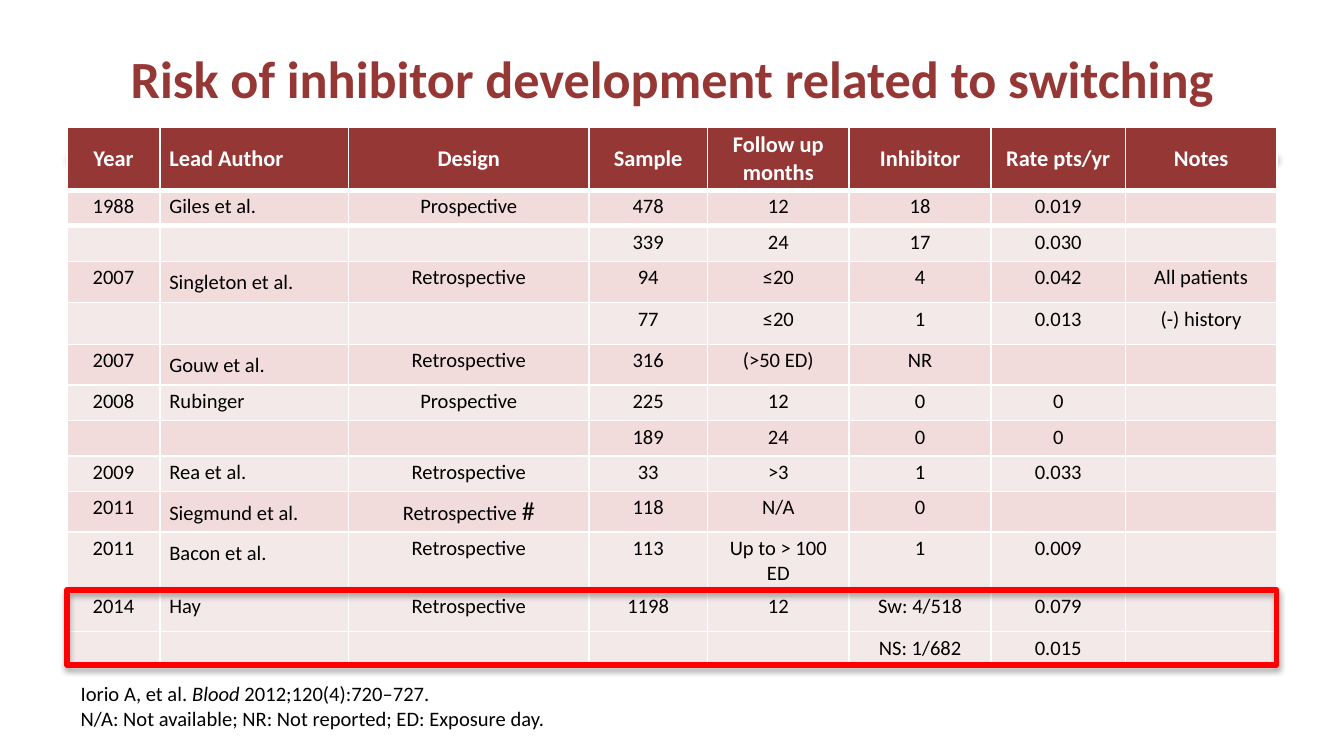
"""Build a slide with a table of studies on inhibitor risk after switching."""
from lxml import etree
from pptx import Presentation
from pptx import util as u
from pptx.dml.color import RGBColor
from pptx.enum import shapes, text
from pptx.oxml import ns

COLORS = {"brand": "953735", "odd": "F2DCDB", "even": "F4E9E9", "ink": "000000",
          "header": "FFFFFF", "frame": "FF0000"}
LEFT, WIDTH = u.Cm(1.27), u.Cm(22.86)
COLUMN_WIDTHS = [1.75, 3.57, 4.54, 2.24, 2.68, 2.68, 2.54, 2.86]
ROW_HEIGHTS = [1.19, 0.67, 0.67, 0.78, 0.79, 0.77, 0.67, 0.67, 0.67, 0.77, 1.1, 0.78, 0.62]
ROWS = [
    ["Year", "Lead Author", "Design", "Sample", "Follow up months", "Inhibitor", "Rate pts/yr", "Notes"],
    ["1988", "Giles et al.", "Prospective", "478", "12", "18", "0.019", ""],
    ["", "", "", "339", "24", "17", "0.030", ""],
    ["2007", "Singleton et al. ", "Retrospective", "94", "≤20", "4", "0.042", "All patients"],
    ["", "", "", "77", "≤20", "1", "0.013", "(-) history"],
    ["2007", "Gouw et al. ", "Retrospective", "316", "(>50 ED)", "NR", "", ""],
    ["2008", "Rubinger", "Prospective", "225", "12", "0", "0", ""],
    ["", "", "", "189", "24", "0", "0", ""],
    ["2009", "Rea et al.", "Retrospective", "33", ">3", "1", "0.033", ""],
    ["2011", "Siegmund et al. ", "Retrospective #", "118", "N/A", "0", "", ""],
    ["2011", "Bacon et al. ", "Retrospective", "113", "Up to > 100 ED", "1", "0.009", ""],
    ["2014", "Hay", "Retrospective", "1198", "12", "Sw: 4/518", "0.079", ""],
    ["", "", "", "", "", "NS: 1/682", "0.015", ""],
]


def style_font(font, size, color, bold=False):
    font.name, font.size, font.bold = "Calibri", u.Pt(size), bold
    font.color.rgb = RGBColor.from_string(COLORS[color])


def add_shadow(shape, opacity):
    effects = etree.SubElement(shape._element.spPr, ns.qn("a:effectLst"))
    shadow = etree.SubElement(effects, ns.qn("a:outerShdw"), blurRad="39370", dist="22860",
                              dir="5400000", rotWithShape="0")
    color = etree.SubElement(shadow, ns.qn("a:srgbClr"), val=COLORS["ink"])
    etree.SubElement(color, ns.qn("a:alpha"), val=str(opacity * 1000))


deck = Presentation()
deck.slide_width, deck.slide_height = u.Cm(25.4), u.Cm(14.29)
page = deck.slides.add_slide(deck.slide_layouts[1])

title = page.shapes.title
title.left, title.top, title.width, title.height = LEFT, u.Cm(0.28), WIDTH, u.Cm(2.39)
title.text_frame.text = "Risk of inhibitor development related to switching"
title.text_frame.auto_size = text.MSO_AUTO_SIZE.NONE
title.text_frame.vertical_anchor = text.MSO_ANCHOR.MIDDLE
style_font(title.text_frame.paragraphs[0].font, 28, "brand", True)

notes = page.placeholders[1]
notes.left, notes.top, notes.width, notes.height = LEFT, u.Cm(12.75), WIDTH, u.Cm(1.22)
notes.text_frame.auto_size = text.MSO_AUTO_SIZE.NONE
para = notes.text_frame.paragraphs[0]
para.space_before = u.Pt(2)
style_font(para.font, 11, "ink")
properties = para._p.get_or_add_pPr()
properties.set("marL", "0")
properties.set("indent", "0")
properties.insert_element_before(etree.Element(ns.qn("a:buNone")), "a:defRPr")
para.add_run().text = "Iorio A, et al. "
span = para.add_run()
span.text = "Blood"
span.font.italic = True
para.add_run().text = " 2012;120(4):720–727."
para.add_line_break()
para.add_run().text = "N/A: Not available; NR: Not reported; ED: Exposure day."

rule = page.shapes.add_connector(shapes.MSO_CONNECTOR.STRAIGHT, LEFT, u.Cm(2.95), LEFT + WIDTH, u.Cm(2.95))
rule.line.color.rgb = RGBColor.from_string(COLORS["brand"])
rule.line.width = u.Pt(2)
add_shadow(rule, 38)

table = page.shapes.add_table(len(ROWS), len(COLUMN_WIDTHS), LEFT, u.Cm(2.41), WIDTH, u.Cm(10.16)).table
for column, width in zip(table.columns, COLUMN_WIDTHS):
    column.width = u.Cm(width)
for number, (row, height, values) in enumerate(zip(table.rows, ROW_HEIGHTS, ROWS)):
    row.height = u.Cm(height)
    is_header = number == 0
    fill = "brand" if is_header else "odd" if number % 2 and number < 11 else "even"
    for position, (cell, value) in enumerate(zip(row.cells, values)):
        cell.fill.solid()
        cell.fill.fore_color.rgb = RGBColor.from_string(COLORS[fill])
        cell.margin_left = cell.margin_right = u.Cm(0.18)
        cell.margin_top = cell.margin_bottom = u.Cm(0.07)
        cell.vertical_anchor = text.MSO_ANCHOR.MIDDLE if is_header else text.MSO_ANCHOR.TOP
        if number < 2:
            border = etree.Element(ns.qn("a:lnB" if is_header else "a:lnT"), w=str(u.Pt(3)))
            solid = etree.SubElement(border, ns.qn("a:solidFill"))
            etree.SubElement(solid, ns.qn("a:srgbClr"), val=COLORS["header"])
            cell._tc.get_or_add_tcPr().insert(0, border)
        para = cell.text_frame.paragraphs[0]
        para.alignment = text.PP_ALIGN.LEFT if position == 1 else text.PP_ALIGN.CENTER
        style_font(para.font, 12 if is_header else 11, "header" if is_header else "ink", is_header)
        if value.endswith((" ", "#")):
            para.add_run().text = value[:-1]
            span = para.add_run()
            span.text = value[-1]
            span.font.size = u.Pt(14)
        elif value:
            para.add_run().text = value
        else:
            etree.SubElement(para._p, ns.qn("a:endParaRPr"), sz="1100")

frame = page.shapes.add_shape(shapes.MSO_SHAPE.RECTANGLE, LEFT, u.Cm(11.15), WIDTH, u.Cm(1.42))
frame.fill.background()
frame.line.color.rgb = RGBColor.from_string(COLORS["frame"])
frame.line.width = u.Pt(3)
add_shadow(frame, 35)

deck.save("out.pptx")
